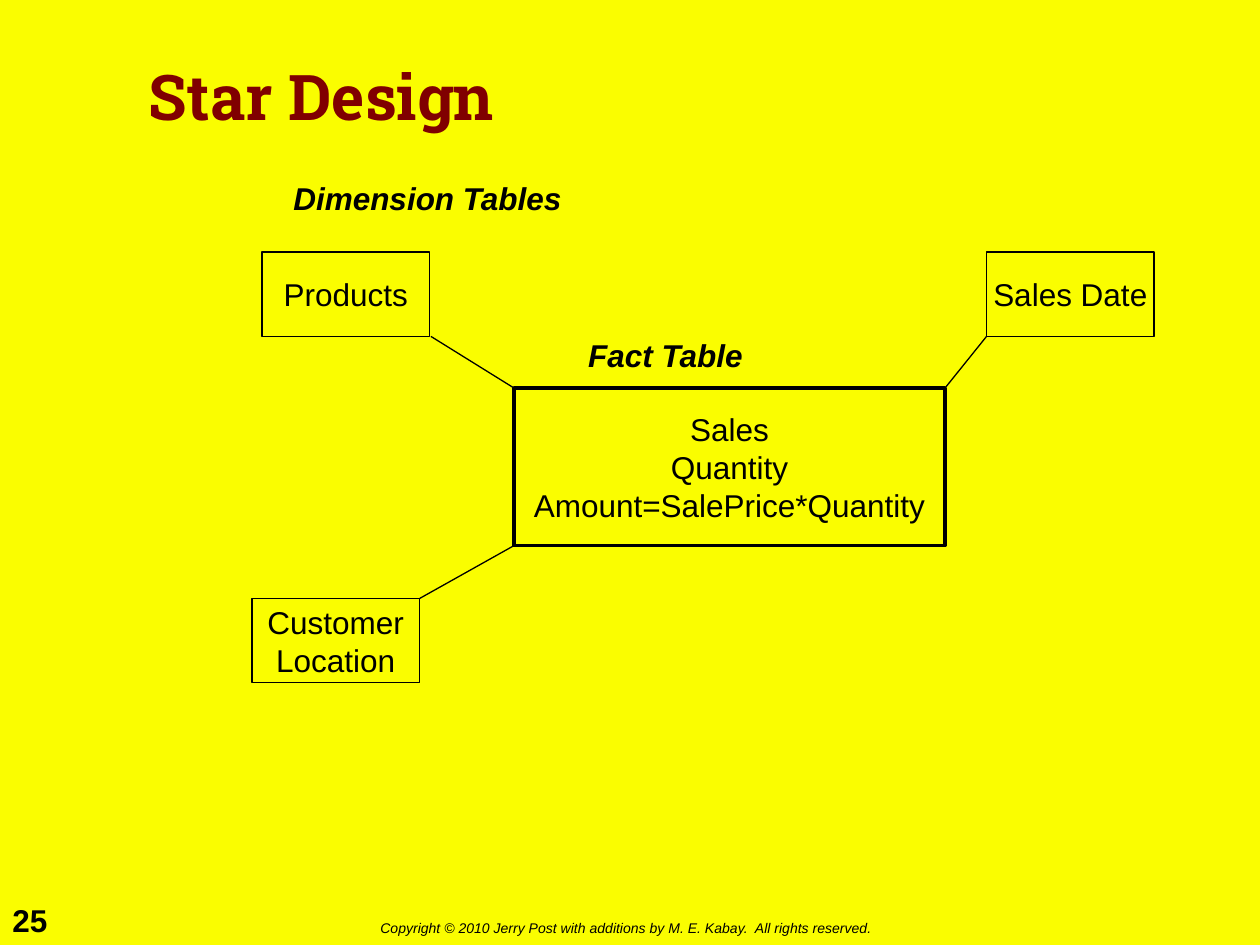
from pptx import Presentation
from pptx.dml.color import RGBColor
from pptx.enum.shapes import MSO_CONNECTOR, MSO_SHAPE
from pptx.enum.text import MSO_ANCHOR, MSO_AUTO_SIZE, PP_ALIGN
from pptx.oxml.ns import qn
from pptx.util import Inches, Pt
from lxml.etree import SubElement

YELLOW = RGBColor(0xFA, 0xFD, 0x00)
MAROON = RGBColor(0x80, 0x00, 0x00)
BLACK = RGBColor(0x00, 0x00, 0x00)

BODY = {"name": "Arial", "size": Pt(18), "bold": False, "italic": False}
HEADING = BODY | {"bold": True, "italic": True}
NUMBER = BODY | {"bold": True}
FOOTER = BODY | {"size": Pt(8), "italic": True}
TITLE = {"name": "Roboto Slab", "size": Pt(36), "bold": True, "italic": False}

FACT_BOX = (4.08, 3.08, 3.42, 1.25)
DIMENSION_SIZE = (1.33, 0.67)
DIMENSIONS = [
    ("Products", 2.08, 2),
    ("Customer\nLocation", 2, 4.75),
    ("Sales Date", 7.83, 2),
]
LABELS = [
    ("Dimension Tables", (2.23, 1.37, 2.34, 0.4), HEADING),
    ("Fact Table", (4.57, 2.62, 1.44, 0.4), HEADING),
    ("25", (0, 7.1, 0.51, 0.4), NUMBER),
    ("Copyright © 2010 Jerry Post with additions by M. E. Kabay.  All rights reserved.",
     (2.92, 7.25, 4.22, 0.24), FOOTER),
]
LINKS = [
    ((3.42, 2.67), (4.08, 3.08)),
    ((7.83, 2.67), (7.5, 3.08)),
    ((3.33, 4.75), (4.08, 4.33)),
]


def set_text(shape, text, font_format, color, alignment):
    """Write the text and format every paragraph alike."""
    shape.text_frame.text = text
    for paragraph in shape.text_frame.paragraphs:
        paragraph.alignment = alignment
        paragraph.font.color.rgb = color
        for name, value in font_format.items():
            setattr(paragraph.font, name, value)


def set_title(slide, text):
    """Place and format the title placeholder."""
    title = slide.shapes.title
    places = {"left": 1.08, "top": 0.17, "width": 7.83, "height": 1.25}
    for name, value in places.items():
        setattr(title, name, Inches(value))
    set_text(title, text, TITLE, MAROON, PP_ALIGN.LEFT)
    title.text_frame.vertical_anchor = MSO_ANCHOR.MIDDLE
    title.text_frame.auto_size = MSO_AUTO_SIZE.NONE
    title.text_frame.paragraphs[0].line_spacing = 0.9


def add_label(slide, text, place, font_format):
    """Add a one-line text box that fits its text."""
    label = slide.shapes.add_textbox(*map(Inches, place))
    label.text_frame.word_wrap = False
    label.text_frame.auto_size = MSO_AUTO_SIZE.SHAPE_TO_FIT_TEXT
    set_text(label, text, font_format, BLACK, PP_ALIGN.LEFT)


def add_entity(slide, text, place, line_width):
    """Add an outlined box for one table of the star."""
    entity = slide.shapes.add_shape(MSO_SHAPE.RECTANGLE, *map(Inches, place))
    entity.shadow.inherit = False
    entity.fill.background()
    entity.line.color.rgb = BLACK
    entity.line.width = Pt(line_width)
    entity.text_frame.word_wrap = False
    entity.text_frame.vertical_anchor = MSO_ANCHOR.MIDDLE
    set_text(entity, text, BODY, BLACK, PP_ALIGN.CENTER)


def add_link(slide, start, end):
    """Join a dimension table to the fact table."""
    link = slide.shapes.add_connector(MSO_CONNECTOR.STRAIGHT, *map(Inches, start + end))
    link.line.color.rgb = BLACK
    link.line.width = Pt(0.75)
    SubElement(link._element.spPr, qn("a:effectLst"))


def main():
    """Build the star design slide."""
    presentation = Presentation()
    presentation.slide_width = Inches(10)
    presentation.slide_height = Inches(7.5)
    slide = presentation.slides.add_slide(presentation.slide_layouts[5])
    slide.background.fill.solid()
    slide.background.fill.fore_color.rgb = YELLOW

    set_title(slide, "Star Design")
    add_entity(slide, "Sales\nQuantity\nAmount=SalePrice*Quantity", FACT_BOX, 2.25)
    for text, left, top in DIMENSIONS:
        add_entity(slide, text, (left, top, *DIMENSION_SIZE), 0.75)
    for start, end in LINKS:
        add_link(slide, start, end)
    for text, place, font_format in LABELS:
        add_label(slide, text, place, font_format)
    presentation.save("out.pptx")


if __name__ == "__main__":
    main()
